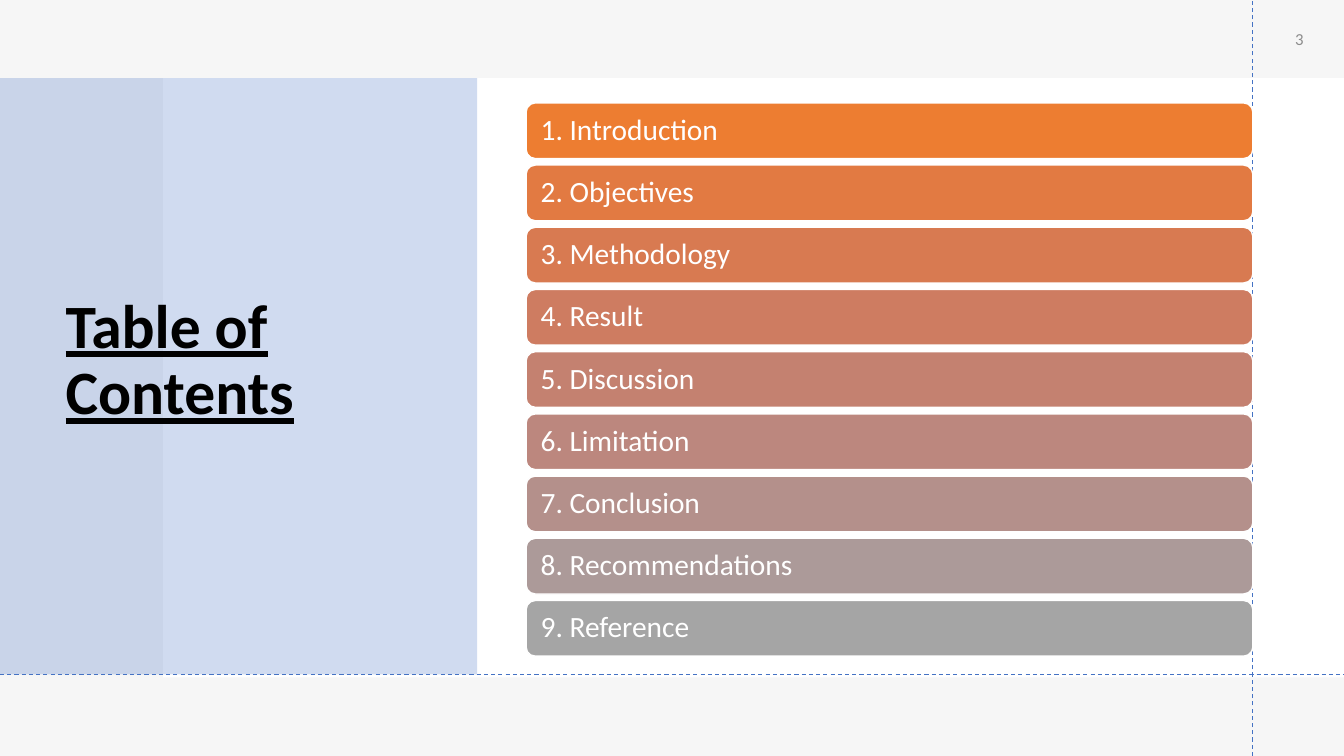
"""Build a table of contents slide with nine graded bars beside a tinted title panel."""
from dataclasses import dataclass
from typing import Any

from lxml import etree
from pptx import Presentation
from pptx.dml.color import RGBColor
from pptx.enum.dml import MSO_LINE
from pptx.enum.shapes import MSO_CONNECTOR, MSO_SHAPE
from pptx.enum.text import MSO_ANCHOR, MSO_AUTO_SIZE, PP_ALIGN
from pptx.oxml.ns import qn
from pptx.util import Pt

RECT = MSO_SHAPE.RECTANGLE
ROUND = MSO_SHAPE.ROUNDED_RECTANGLE
STRAIGHT = MSO_CONNECTOR.STRAIGHT
DASH = MSO_LINE.DASH
MIDDLE = MSO_ANCHOR.MIDDLE
NO_FIT = MSO_AUTO_SIZE.NONE
LEFT = PP_ALIGN.LEFT
CENTER = PP_ALIGN.CENTER

WHITE = RGBColor(0xFF, 0xFF, 0xFF)
BLACK = RGBColor(0x00, 0x00, 0x00)
GREY = RGBColor(0x8C, 0x8C, 0x8C)
PALE = RGBColor(0xE7, 0xE6, 0xE6)
PAPER = RGBColor(0xF6, 0xF6, 0xF6)
BLUE = RGBColor(0x44, 0x72, 0xC4)

WIDE, HIGH = 960, 540
FONT = "Calibri"
BAR_LEFT, BAR_TOP, BAR_WIDE, BAR_HIGH, BAR_STEP = 375.8, 73.5, 519.2, 39.8, 44.43


@dataclass
class Panel:
    left: float
    top: float
    wide: float
    high: float
    fill: RGBColor
    alpha: int = 100


@dataclass
class Rule:
    x1: float
    y1: float
    x2: float
    y2: float


@dataclass
class Topic:
    name: str
    fill: RGBColor


PANELS = [
    Panel(0, 0, WIDE, HIGH, WHITE),
    Panel(0, 0, WIDE, HIGH, PALE, 35),
    Panel(116.5, 55.8, 843.5, 428, WHITE),
    Panel(0, 55.8, 340.8, 426, BLUE, 25),
]
RULES = [Rule(895, HIGH, 895, 0), Rule(0, 481.7, WIDE, 481.7)]
TOPICS = [
    Topic("Introduction", RGBColor(0xED, 0x7D, 0x31)),
    Topic("Objectives", RGBColor(0xE2, 0x7A, 0x42)),
    Topic("Methodology", RGBColor(0xD8, 0x7A, 0x51)),
    Topic("Result", RGBColor(0xCE, 0x7C, 0x61)),
    Topic("Discussion", RGBColor(0xC4, 0x81, 0x70)),
    Topic("Limitation", RGBColor(0xBC, 0x87, 0x7E)),
    Topic("Conclusion", RGBColor(0xB4, 0x90, 0x8B)),
    Topic("Recommendations", RGBColor(0xAC, 0x9A, 0x99)),
    Topic("Reference", RGBColor(0xA5, 0xA5, 0xA5)),
]


def apply(item: Any, form: dict[str, Any]) -> None:
    for key, value in form.items():
        setattr(item, key, value)


def write(shape: Any, text: str, color: RGBColor, font: dict[str, Any],
          para: dict[str, Any], frame: dict[str, Any]) -> None:
    body = shape.text_frame
    body.text = text
    apply(body, {"word_wrap": True, "auto_size": NO_FIT,
                 "vertical_anchor": MIDDLE} | frame)
    first = body.paragraphs[0]
    apply(first, para)
    face = first.runs[0].font
    apply(face, {"name": FONT} | font)
    face.color.rgb = color


def add_panel(slide: Any, panel: Panel) -> Any:
    shape = slide.shapes.add_shape(RECT, Pt(panel.left), Pt(panel.top),
                                   Pt(panel.wide), Pt(panel.high))
    shape.shadow.inherit = False
    shape.fill.solid()
    shape.fill.fore_color.rgb = panel.fill
    shape.line.fill.background()
    if panel.alpha < 100:
        tint = shape.element.spPr.find(qn("a:solidFill"))[0]
        etree.SubElement(tint, qn("a:alpha"), val=str(panel.alpha * 1000))
    return shape


def add_rule(slide: Any, rule: Rule) -> None:
    line = slide.shapes.add_connector(STRAIGHT, Pt(rule.x1), Pt(rule.y1),
                                      Pt(rule.x2), Pt(rule.y2))
    line.line.color.rgb = BLUE
    apply(line.line, {"width": Pt(0.75), "dash_style": DASH})
    etree.SubElement(line.element.spPr, qn("a:effectLst"))


def add_bar(slide: Any, index: int, topic: Topic) -> None:
    bar = slide.shapes.add_shape(ROUND, Pt(BAR_LEFT), Pt(BAR_TOP + index * BAR_STEP),
                                 Pt(BAR_WIDE), Pt(BAR_HIGH))
    bar.shadow.inherit = False
    bar.fill.solid()
    bar.fill.fore_color.rgb = topic.fill
    bar.line.color.rgb = WHITE
    bar.line.width = Pt(1)
    write(bar, f"{index + 1}. {topic.name}", WHITE, {"size": Pt(21)},
          {"alignment": LEFT, "line_spacing": 0.9},
          {"margin_left": Pt(8.5), "margin_right": Pt(8.5)})


def main() -> None:
    deck = Presentation()
    apply(deck, {"slide_width": Pt(WIDE), "slide_height": Pt(HIGH)})
    slide = deck.slides.add_slide(deck.slide_layouts[5])
    back = slide.background.fill
    back.solid()
    back.fore_color.rgb = PAPER

    panels = [add_panel(slide, panel) for panel in PANELS]
    title = slide.shapes.title
    apply(title, {"left": Pt(39.6), "top": Pt(53.3),
                  "width": Pt(284.4), "height": Pt(409.7)})
    write(title, "Table of Contents", BLACK,
          {"size": Pt(44), "bold": True, "underline": True},
          {"alignment": LEFT, "line_spacing": 0.9, "space_after": Pt(6)}, {})
    panels[-1].element.addnext(title.element)

    for rule in RULES:
        add_rule(slide, rule)
    number = slide.shapes.add_textbox(Pt(896.4), Pt(0), Pt(63.6), Pt(55.4))
    write(number, "3", GREY, {"size": Pt(12)},
          {"alignment": CENTER, "space_after": Pt(6)}, {})
    for index, topic in enumerate(TOPICS):
        add_bar(slide, index, topic)
    deck.save("out.pptx")


if __name__ == "__main__":
    main()
